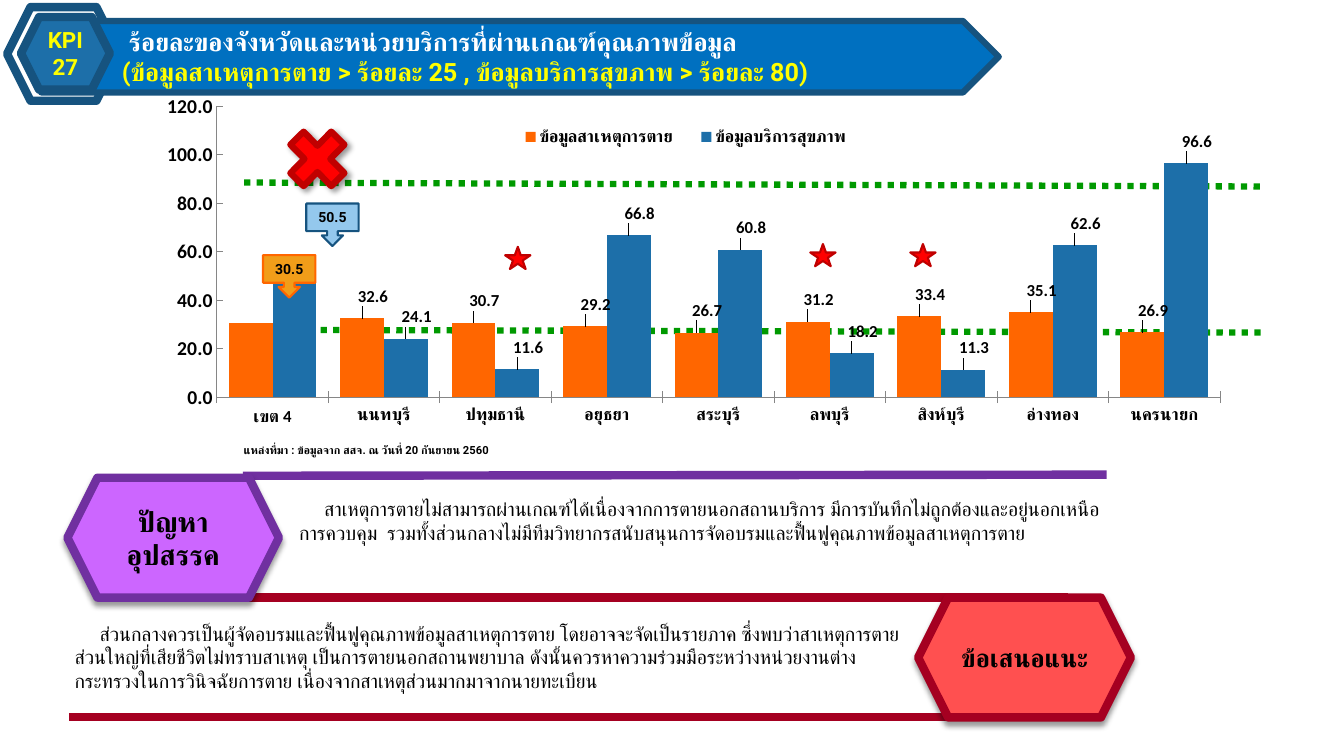
import collections

import lxml.etree
import pptx
import pptx.chart.data
import pptx.dml.color
import pptx.enum.chart
import pptx.enum.dml
import pptx.enum.shapes
import pptx.enum.text
import pptx.oxml
import pptx.oxml.ns
import pptx.util

Cm = pptx.util.Cm
Pt = pptx.util.Pt
RGBColor = pptx.dml.color.RGBColor
SHAPE = pptx.enum.shapes.MSO_SHAPE
ALIGN = pptx.enum.text.PP_ALIGN
ANCHOR = pptx.enum.text.MSO_ANCHOR
TICK = pptx.enum.chart.XL_TICK_MARK
qn = pptx.oxml.ns.qn
Box = collections.namedtuple("Box", "left top width height")

BLACK = RGBColor(0x00, 0x00, 0x00)
WHITE = RGBColor(0xFF, 0xFF, 0xFF)
YELLOW = RGBColor(0xFF, 0xFF, 0x00)
GREEN = RGBColor(0x00, 0x99, 0x00)
GREY = RGBColor(0x86, 0x86, 0x86)
ORANGE = RGBColor(0xFF, 0x66, 0x00)
AMBER = RGBColor(0xF1, 0x9D, 0x19)
BLUE = RGBColor(0x1D, 0x6F, 0xA9)
BANNER_BLUE = RGBColor(0x00, 0x70, 0xC0)
DARK_BLUE = RGBColor(0x16, 0x53, 0x7F)
LIGHT_BLUE = RGBColor(0x94, 0xC8, 0xED)
PURPLE = RGBColor(0x70, 0x30, 0xA0)
LILAC = RGBColor(0xCC, 0x66, 0xFF)
CRIMSON = RGBColor(0xA5, 0x00, 0x21)
CORAL = RGBColor(0xFF, 0x50, 0x50)
RED = RGBColor(0xFF, 0x00, 0x00)
DARK_RED = RGBColor(0xC0, 0x00, 0x00)

CATEGORIES = ["เขต 4", "นนทบุรี", "ปทุมธานี", "อยุธยา", "สระบุรี", "ลพบุรี", "สิงห์บุรี", "อ่างทอง", "นครนายก"]
SERIES = [
    ("ข้อมูลสาเหตุการตาย", ORANGE, [30.5, 32.6, 30.7, 29.2, 26.7, 31.2, 33.4, 35.1, 26.9]),
    ("ข้อมูลบริการสุขภาพ", BLUE, [50.5, 24.1, 11.6, 66.8, 60.8, 18.2, 11.3, 62.6, 96.6]),
]
PROBLEM = "สาเหตุการตายไม่สามารถผ่านเกณฑ์ได้เนื่องจากการตายนอกสถานบริการ มีการบันทึกไม่ถูกต้องและอยู่นอกเหนือการควบคุม  รวมทั้งส่วนกลางไม่มีทีมวิทยากรสนับสนุนการจัดอบรมและฟื้นฟูคุณภาพข้อมูลสาเหตุการตาย"
SUGGESTION = "ส่วนกลางควรเป็นผู้จัดอบรมและฟื้นฟูคุณภาพข้อมูลสาเหตุการตาย โดยอาจจะจัดเป็นรายภาค ซึ่งพบว่าสาเหตุการตายส่วนใหญ่ที่เสียชีวิตไม่ทราบสาเหตุ เป็นการตายนอกสถานพยาบาล ดังนั้นควรหาความร่วมมือระหว่างหน่วยงานต่างกระทรวงในการวินิจฉัยการตาย เนื่องจากสาเหตุส่วนมากมาจากนายทะเบียน"


def write(frame, lines, size, bold=True, align=ALIGN.LEFT, indent=0):
    """Write (text, colour) lines as paragraphs of the frame."""
    for index, (text, color) in enumerate(lines):
        paragraph = frame.add_paragraph() if index else frame.paragraphs[0]
        paragraph.alignment = align
        if indent and index == 0:
            paragraph._p.get_or_add_pPr().set("indent", str(Cm(indent)))
        run = paragraph.add_run()
        run.text = text
        run.font.name = "Roboto"
        run.font.size = Pt(size)
        run.font.bold = bold
        run.font.color.rgb = color
        script_font = lxml.etree.SubElement(run._r.get_or_add_rPr(), qn("a:cs"))
        script_font.set("typeface", "Roboto")


def add_shape(slide, kind, box, fill, line, width, shadow_angle=None):
    """Add a filled and outlined shape, with a soft shadow if an angle is given."""
    shape = slide.shapes.add_shape(kind, *map(Cm, box))
    shape.shadow.inherit = False
    if fill is None:
        shape.fill.background()
    else:
        shape.fill.solid()
        shape.fill.fore_color.rgb = fill
    shape.line.color.rgb = line
    shape.line.width = Pt(width)
    if shadow_angle is not None:
        effects = shape._element.spPr.find(qn("a:effectLst"))
        shadow = lxml.etree.SubElement(effects, qn("a:outerShdw"), blurRad=str(Pt(4)), dist=str(Pt(3)),
                                       dir=str(shadow_angle * 60000), rotWithShape="0")
        color = lxml.etree.SubElement(shadow, qn("a:srgbClr"), val="000000")
        lxml.etree.SubElement(color, qn("a:alpha"), val="40000")
    return shape


def add_label(shape, lines, size, margin=None):
    """Centre bold lines inside a shape."""
    frame = shape.text_frame
    frame.word_wrap = True
    frame.vertical_anchor = ANCHOR.MIDDLE
    if margin is not None:
        frame.margin_left = frame.margin_right = frame.margin_top = frame.margin_bottom = Cm(margin)
    write(frame, lines, size, align=ALIGN.CENTER)


def add_text(slide, box, text, size, bold, wrap=True, indent=0):
    """Add a text box with one paragraph."""
    frame = slide.shapes.add_textbox(*map(Cm, box)).text_frame
    frame.word_wrap = wrap
    write(frame, [(text, BLACK)], size, bold, indent=indent)


def add_line(slide, start, end, color, width, dash=None):
    """Add a straight line without a shadow."""
    line = slide.shapes.add_connector(pptx.enum.shapes.MSO_CONNECTOR.STRAIGHT, *map(Cm, start + end))
    line.line.color.rgb = color
    line.line.width = Pt(width)
    if dash is not None:
        line.line.dash_style = dash
    lxml.etree.SubElement(line._element.spPr, qn("a:effectLst"))


def manual_layout(inner=False, **fractions):
    """Return a chart layout element with the given fractions."""
    layout = pptx.oxml.parse_xml('<c:layout xmlns:c="%s"/>' % pptx.oxml.ns.nsdecls("c").split('"')[1])
    manual = lxml.etree.SubElement(layout, qn("c:manualLayout"))
    if inner:
        lxml.etree.SubElement(manual, qn("c:layoutTarget"), val="inner")
    if "w" in fractions:
        for mode in ("xMode", "yMode"):
            lxml.etree.SubElement(manual, qn("c:" + mode), val="edge")
    for name, value in fractions.items():
        lxml.etree.SubElement(manual, qn("c:" + name), val=str(value))
    return layout


def draw_header(slide, box):
    """Draw the banner with its KPI badge."""
    left, top, width, height = box
    add_shape(slide, SHAPE.HEXAGON, Box(left, top, 2.84, height), None, DARK_BLUE, 6)
    banner = add_shape(slide, SHAPE.PENTAGON, Box(left + 0.86, top + 0.35, width - 0.86, 1.8),
                       BANNER_BLUE, DARK_BLUE, 4.5)
    frame = banner.text_frame
    frame.word_wrap = True
    frame.vertical_anchor = ANCHOR.TOP
    frame.margin_left = Cm(2.03)
    write(frame, [("ร้อยละของจังหวัดและหน่วยบริการที่ผ่านเกณฑ์คุณภาพข้อมูล", WHITE),
                  ("(ข้อมูลสาเหตุการตาย > ร้อยละ 25 , ข้อมูลบริการสุขภาพ > ร้อยละ 80)", YELLOW)], 18, indent=0.18)
    badge = add_shape(slide, SHAPE.HEXAGON, Box(left + 0.35, top + 0.25, 2.24, 1.83), BLUE, DARK_BLUE, 6)
    add_label(badge, [("KPI", YELLOW), ("27", YELLOW)], 16, margin=0)


def draw_chart(slide, box):
    """Draw the column chart of both indicators."""
    data = pptx.chart.data.CategoryChartData(number_format="0.0")
    data.categories = CATEGORIES
    for name, _, values in SERIES:
        data.add_series(name, values)
    chart = slide.shapes.add_chart(pptx.enum.chart.XL_CHART_TYPE.COLUMN_CLUSTERED, *map(Cm, box), data).chart
    chart.has_title = False
    chart.font.name, chart.font.size, chart.font.color.rgb = "Calibri", Pt(18), BLACK
    plot = chart.plots[0]
    plot.gap_width, plot.overlap, plot.vary_by_categories = 54, 0, False

    for axis, size, tick in ((chart.category_axis, 12, TICK.CROSS), (chart.value_axis, 14, TICK.INSIDE)):
        axis.has_major_gridlines = False
        axis.major_tick_mark, axis.minor_tick_mark = tick, TICK.NONE
        axis.format.line.color.rgb = GREY
        font = axis.tick_labels.font
        font.name, font.size, font.bold = "Calibri", Pt(size), True
    value_axis = chart.value_axis
    value_axis.minimum_scale, value_axis.maximum_scale, value_axis.major_unit = 0, 120, 20
    value_axis.tick_labels.number_format = "0.0"
    value_axis.tick_labels.number_format_is_linked = False

    for series, (_, color, values) in zip(plot.series, SERIES):
        series.format.fill.solid()
        series.format.fill.fore_color.rgb = color
        series.data_labels.show_value = False
        for index in range(1, len(values)):
            label = series.points[index].data_label
            label.position = pptx.enum.chart.XL_LABEL_POSITION.OUTSIDE_END
            label.font.size, label.font.bold = Pt(12), True
        for element in series._element.iter(qn("c:dLbl")):
            element.insert(1, manual_layout(x=0.01, y=-0.02))

    chart.has_legend = True
    legend = chart.legend
    legend.position = pptx.enum.chart.XL_LEGEND_POSITION.TOP
    legend.include_in_layout = False
    legend.font.name, legend.font.size, legend.font.bold = "Roboto", Pt(12), True
    for old in legend._element.findall(qn("c:layout")):
        legend._element.remove(old)
    legend._element.find(qn("c:legendPos")).addnext(manual_layout(x=0.33, y=0.09, w=0.34, h=0.08))

    chart_element = chart._chartSpace.find(qn("c:chart"))
    plot_area = chart_element.find(qn("c:plotArea"))
    for old in plot_area.findall(qn("c:layout")):
        plot_area.remove(old)
    plot_area.insert(0, manual_layout(True, x=0.064, y=0.051, w=0.933, h=0.75))
    clear = pptx.oxml.parse_xml("<c:spPr %s><a:noFill/><a:ln><a:noFill/></a:ln></c:spPr>"
                                % pptx.oxml.ns.nsdecls("c", "a"))
    chart_element.addnext(clear)


def draw_target_lines(slide, box):
    """Draw the dotted target lines behind the chart."""
    for start, end in (((2.42, 2.42), (28.05, 2.52)), ((2.44, 6.13), (28.07, 6.2))):
        add_line(slide, (box.left + start[0], box.top + start[1]), (box.left + end[0], box.top + end[1]),
                 GREEN, 4.5, pptx.enum.dml.MSO_LINE.ROUND_DOT)


def draw_callouts(slide, box):
    """Draw the regional value callouts and the source note."""
    for x, y, text, fill, line in ((2.9, 4.25, "30.5", AMBER, ORANGE), (3.99, 2.95, "50.5", LIGHT_BLUE, DARK_BLUE)):
        callout = add_shape(slide, SHAPE.DOWN_ARROW_CALLOUT, Box(box.left + x, box.top + y, 1.32, 1.07), fill, line, 1.5)
        add_label(callout, [(text, BLACK)], 10, margin=0)
    add_text(slide, Box(box.left + 2.16, box.top + 8.87, 7.52, 0.61),
             "แหล่งที่มา : ข้อมูลจาก สสจ. ณ วันที่ 20 กันยายน 2560", 8, True, wrap=False)


def draw_marks(slide, box):
    """Draw the stars and the cross above the columns."""
    for x, y in ((9, 4.04), (19.21, 3.97), (16.69, 3.97)):
        add_shape(slide, SHAPE.STAR_5_POINT, Box(box.left + x, box.top + y, 0.64, 0.56), RED, DARK_RED, 1.5)
    add_shape(slide, SHAPE.MATH_MULTIPLY, Box(box.left + 3.28, box.top + 0.82, 1.98, 2.01), RED, DARK_RED, 4.5, 45)


def draw_problem(slide, box):
    """Draw the problem hexagon, its rule and its text."""
    left, top, width, height = box
    add_line(slide, (left + 4.42, top - 0.05), (left + width, top - 0.08), PURPLE, 6)
    add_line(slide, (left + 4.24, top + height), (left + 25.22, top + height), CRIMSON, 6)
    hexagon = add_shape(slide, SHAPE.HEXAGON, Box(left, top, 5.33, height), LILAC, PURPLE, 6, 90)
    add_label(hexagon, [("ปัญหาอุปสรรค", BLACK)], 20)
    add_text(slide, Box(left + 5.59, top + 0.36, 20.7, 2.06), PROBLEM, 14, False, indent=0.63)


def draw_suggestion(slide, box):
    """Draw the suggestion hexagon, its rule and its text."""
    left, top, width, height = box
    add_line(slide, (left + 0.12, top + height - 0.02), (left + 22.73, top + height - 0.02), CRIMSON, 6)
    hexagon = add_shape(slide, SHAPE.HEXAGON, Box(left + width - 5.36, top, 5.36, height), CORAL, CRIMSON, 6, 90)
    add_label(hexagon, [("ข้อเสนอแนะ", BLACK)], 18)
    add_text(slide, Box(left, top + 0.48, 21.56, 2.06), SUGGESTION, 14, False, indent=0.63)


def main():
    """Build the slide and save it."""
    presentation = pptx.Presentation()
    presentation.slide_width, presentation.slide_height = Cm(33.87), Cm(19.05)
    slide = presentation.slides.add_slide(presentation.slide_layouts[6])
    chart_box = Box(3.73, 2.18, 27.1, 9.78)
    for draw in (draw_target_lines, draw_chart, draw_callouts):
        draw(slide, chart_box)
    draw_header(slide, Box(0.18, 0.18, 24.99, 2.36))
    draw_problem(slide, Box(1.7, 12.04, 26.19, 3.02))
    draw_suggestion(slide, Box(1.63, 15.06, 26.87, 3.02))
    draw_marks(slide, chart_box)
    presentation.save("out.pptx")


if __name__ == "__main__":
    main()
